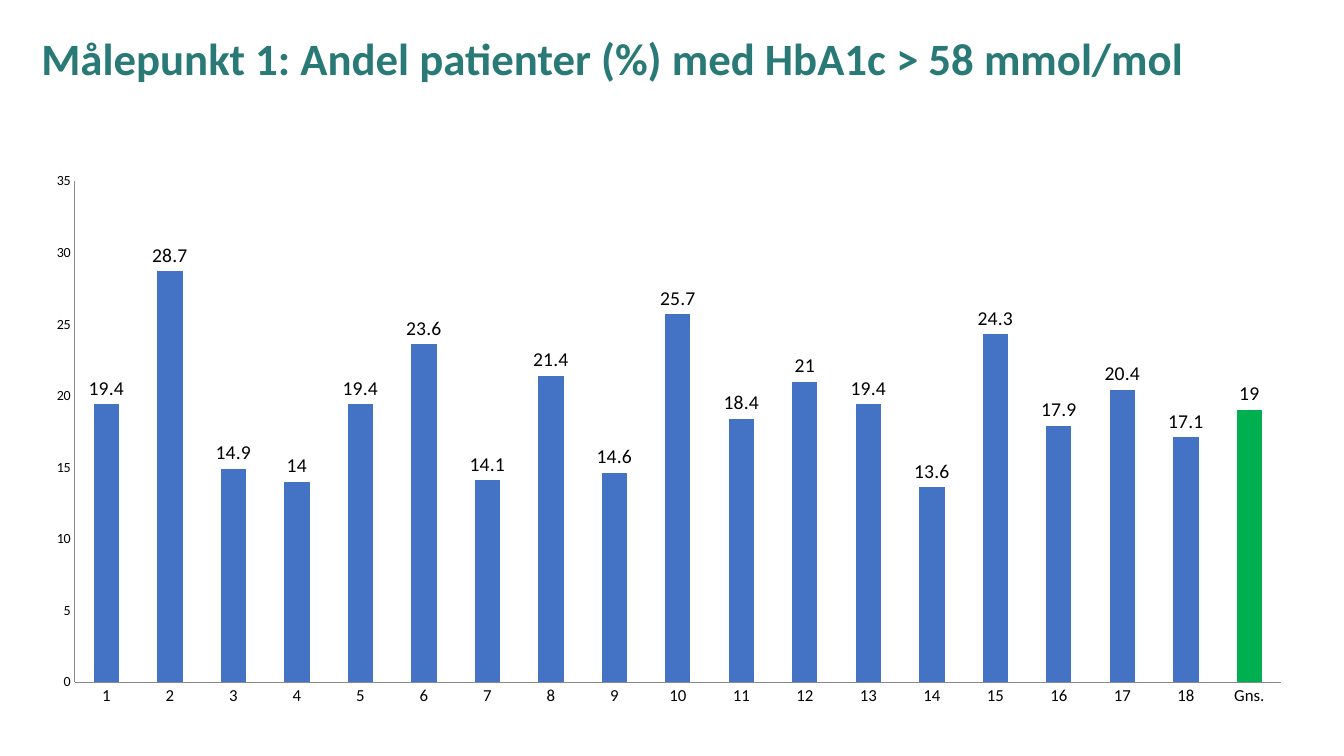
from lxml import etree
from pptx import Presentation
from pptx.chart.data import CategoryChartData
from pptx.dml.color import RGBColor
from pptx.enum.chart import XL_CHART_TYPE, XL_LABEL_POSITION, XL_TICK_MARK
from pptx.enum.text import MSO_ANCHOR, MSO_AUTO_SIZE, PP_ALIGN
from pptx.util import Inches, Pt

COLUMNS = XL_CHART_TYPE.COLUMN_CLUSTERED
OUTSIDE_END = XL_LABEL_POSITION.OUTSIDE_END
NO_TICKS = XL_TICK_MARK.NONE
MIDDLE = MSO_ANCHOR.MIDDLE
LEFT = PP_ALIGN.LEFT
NO_AUTOFIT = MSO_AUTO_SIZE.NONE

TEAL = RGBColor(0x29, 0x7A, 0x77)
BLUE = RGBColor(0x44, 0x72, 0xC4)
GREEN = RGBColor(0x00, 0xB0, 0x50)
GREY = RGBColor(0x89, 0x89, 0x89)
BLACK = RGBColor(0, 0, 0)
FONT = "Calibri"
MARGIN = Inches(0.31)


def write_text(box, text, size, color, bold=False):
    frame = box.text_frame
    frame.text = text
    frame.word_wrap = True
    frame.auto_size = NO_AUTOFIT
    frame.vertical_anchor = MIDDLE
    para = frame.paragraphs[0]
    para.alignment = LEFT
    para.line_spacing = 0.9
    span = para.runs[0]
    span.font.name = FONT
    span.font.size = Pt(size)
    span.font.bold = bold
    span.font.color.rgb = color


def style_font(font, size):
    font.name = FONT
    font.size = Pt(size)
    font.color.rgb = BLACK


# Deck and page
deck = Presentation()
deck.slide_width, deck.slide_height = Inches(13.33), Inches(7.5)
page = deck.slides.add_slide(deck.slide_layouts[5])

# Title
title = page.shapes.title
title.left, title.top = MARGIN, Inches(0.07)
title.width, title.height = Inches(12.71), Inches(1.06)
write_text(title, "Målepunkt 1: Andel patienter (%) med HbA1c > 58 mmol/mol",
           size=32, color=TEAL, bold=True)

# Shares per clinic, with the average last
shares = [19.4, 28.7, 14.9, 14, 19.4, 23.6, 14.1, 21.4, 14.6, 25.7,
          18.4, 21, 19.4, 13.6, 24.3, 17.9, 20.4, 17.1]
average = 19
data = CategoryChartData()
data.categories = [str(number + 1) for number in range(len(shares))] + ["Gns."]
data.add_series("Series 1", shares + [average])

# Column chart
chart = page.shapes.add_chart(COLUMNS, MARGIN, Inches(1.61), Inches(12.65),
                              Inches(5.5), data).chart
chart.has_legend = False
chart.has_title = False
style_font(chart.font, 10)

# Axes
for axis, size in ((chart.category_axis, 12), (chart.value_axis, 10)):
    axis.major_tick_mark = axis.minor_tick_mark = NO_TICKS
    axis.has_major_gridlines = False
    axis.format.line.color.rgb = GREY
    axis.format.line.width = Pt(0.75)
    style_font(axis.tick_labels.font, size)
chart.value_axis.minimum_scale = 0
chart.value_axis.maximum_scale = 35
chart.value_axis.major_unit = 5

# Columns and their labels
plot = chart.plots[0]
plot.gap_width = 150
plot.vary_by_categories = False
columns = plot.series[0]
columns.invert_if_negative = False
columns.format.fill.solid()
columns.format.fill.fore_color.rgb = BLUE
average_fill = columns.points[len(shares)].format.fill
average_fill.solid()
average_fill.fore_color.rgb = GREEN
labels = columns.data_labels
labels.show_value = True
labels.position = OUTSIDE_END
style_font(labels.font, 14)

# Plot area as shares of the chart frame
C = "{http://schemas.openxmlformats.org/drawingml/2006/chart}"
plot_area = chart.element.find(f".//{C}plotArea")
layout = plot_area.find(f"{C}layout")
if layout is None:
    layout = etree.Element(f"{C}layout")
    plot_area.insert(0, layout)
manual = etree.SubElement(layout, f"{C}manualLayout")
for tag, value in (("layoutTarget", "inner"), ("xMode", "edge"), ("yMode", "edge"),
                   ("x", 0.034), ("y", 0.034), ("w", 0.946), ("h", 0.904)):
    etree.SubElement(manual, f"{C}{tag}").set("val", str(value))

deck.save("out.pptx")
